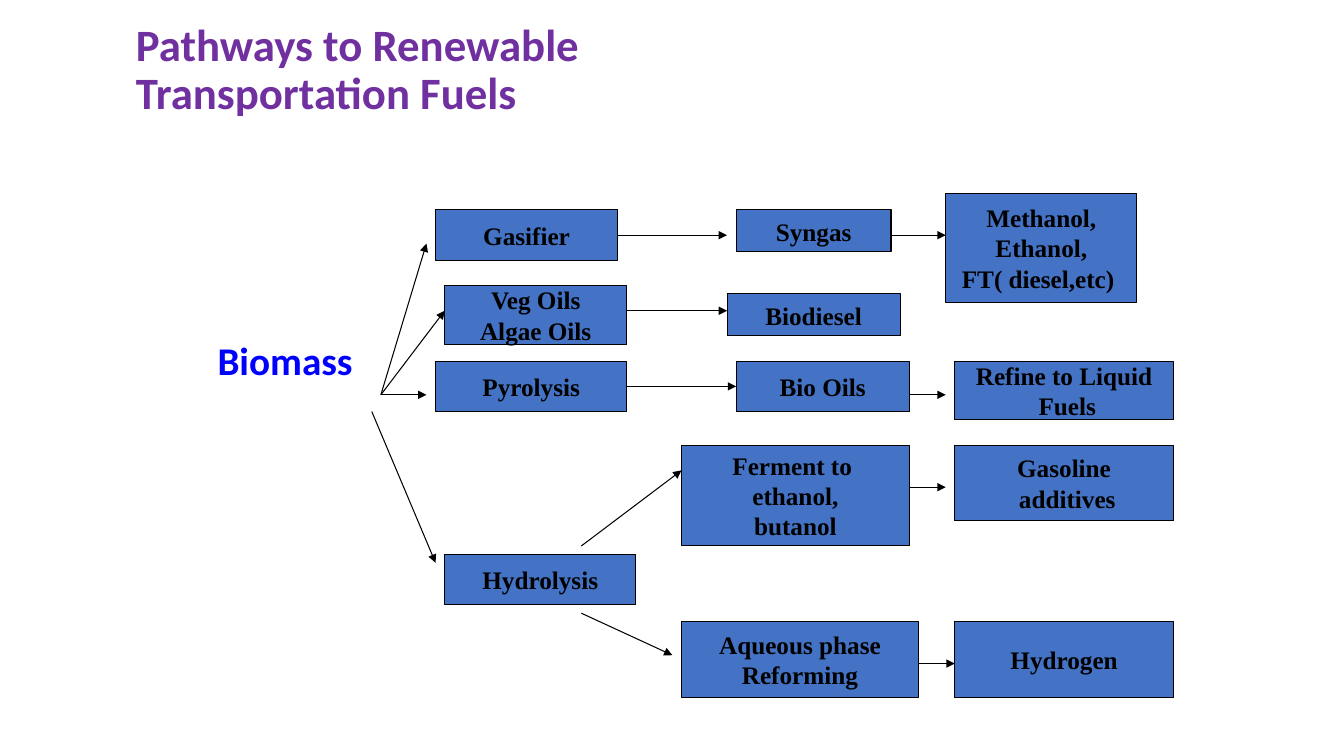
from lxml import etree
from pptx import Presentation
from pptx.dml.color import RGBColor
from pptx.enum.shapes import MSO_CONNECTOR, MSO_SHAPE
from pptx.enum.text import MSO_ANCHOR, PP_ALIGN
from pptx.oxml.ns import qn
from pptx.util import Inches, Pt

PURPLE = RGBColor(0x70, 0x30, 0xA0)
BLUE = RGBColor(0x00, 0x00, 0xFF)
BOX_BLUE = RGBColor(0x44, 0x72, 0xC4)
BLACK = RGBColor(0, 0, 0)

# Headings: text, (left, top, width, height) in inches, size, colour
HEADINGS = [
    ("Pathways to Renewable\vTransportation Fuels", (1.25, 0.08, 10.58, 1.25), 32, PURPLE),
    ("Biomass", (2.06, 3.31, 1.7, 0.57), 28, BLUE),
]

# Boxes: lines, (column, row, columns wide, rows high)
BOXES = [
    # Processes
    (["Gasifier"], (0, 25, 20, 6)),
    (["Veg Oils", "Algae Oils"], (1, 34, 20, 7)),
    (["Pyrolysis"], (0, 43, 21, 6)),
    (["Hydrolysis"], (1, 66, 21, 6)),
    # Intermediates
    (["Syngas"], (33, 25, 17, 5)),
    (["Biodiesel"], (32, 35, 19, 5)),
    (["Bio Oils"], (33, 43, 19, 6)),
    (["Ferment to ", "ethanol,", "butanol"], (27, 53, 25, 12)),
    (["Aqueous phase", "Reforming"], (27, 74, 26, 9)),
    # Products
    (["Methanol,", "Ethanol,", "FT( diesel,etc) "], (56, 23, 21, 13)),
    (["Refine to Liquid", " Fuels"], (57, 43, 24, 7)),
    (["Gasoline", " additives"], (57, 53, 24, 9)),
    (["Hydrogen"], (57, 74, 24, 9)),
]

# Arrows: (column, row) of tail and of head
ARROWS = [
    # From biomass
    ((-6, 47), (-1, 29)),
    ((-6, 47), (1, 37)),
    ((-6, 47), (-1, 47)),
    ((-7, 49), (0, 67)),
    # From processes
    ((20, 28), (32, 28)),
    ((21, 37), (32, 37)),
    ((21, 46), (33, 46)),
    ((16, 65), (27, 56)),
    ((16, 73), (26, 78)),
    # To products
    ((50, 28), (56, 28)),
    ((52, 47), (56, 47)),
    ((52, 58), (56, 58)),
    ((53, 79), (57, 79)),
]

# Grid: columns start at the process boxes, rows are twelfths of an inch
GRID_LEFT = 4.32
COLUMN = 5.15 / 57
ROW = 1 / 12


def grid_point(col, row):
    return Inches(GRID_LEFT + col * COLUMN), Inches(row * ROW)


def style(p, font, size, color):
    p.font.name = font
    p.font.size = Pt(size)
    p.font.bold = True
    p.font.color.rgb = color


def add_heading(slide, text, frame, size, color):
    tf = slide.shapes.add_textbox(*map(Inches, frame)).text_frame
    tf.word_wrap = True
    tf.vertical_anchor = MSO_ANCHOR.MIDDLE
    p = tf.paragraphs[0]
    p.text = text
    p.line_spacing = 0.9
    style(p, "Calibri", size, color)


def add_box(slide, lines, cell):
    col, row, cols, rows = cell
    sp = slide.shapes.add_shape(MSO_SHAPE.RECTANGLE, *grid_point(col, row),
                                Inches(cols * COLUMN), Inches(rows * ROW))
    sp.shadow.inherit = False
    sp.fill.solid()
    sp.fill.fore_color.rgb = BOX_BLUE
    sp.line.color.rgb = BLACK
    sp.line.width = Pt(0.75)
    tf = sp.text_frame
    tf.word_wrap = False
    tf.vertical_anchor = MSO_ANCHOR.MIDDLE
    tf.text = "\n".join(lines)
    for p in tf.paragraphs:
        p.alignment = PP_ALIGN.CENTER
        style(p, "Times New Roman", 18, BLACK)
    return sp


def add_arrow(slide, tail, head, sides):
    cx = slide.shapes.add_connector(MSO_CONNECTOR.STRAIGHT,
                                    *grid_point(*tail), *grid_point(*head))
    cx.line.color.rgb = BLACK
    cx.line.width = Pt(0.75)
    etree.SubElement(cx.line._get_or_add_ln(), qn("a:tailEnd"), type="triangle")
    etree.SubElement(cx._element.spPr, qn("a:effectLst"))
    if tail in sides:
        cx.begin_connect(*sides[tail])
    if head in sides:
        cx.end_connect(*sides[head])


def main():
    prs = Presentation()
    prs.slide_width, prs.slide_height = Inches(13.33), Inches(7.5)
    slide = prs.slides.add_slide(prs.slide_layouts[6])

    for heading in HEADINGS:
        add_heading(slide, *heading)

    # Boxes, with the middles of their left and right sides
    sides = {}
    for lines, cell in BOXES:
        sp = add_box(slide, lines, cell)
        col, row, cols, rows = cell
        middle = row + rows / 2
        sides[col, middle] = (sp, 1)
        sides[col + cols, middle] = (sp, 3)

    for tail, head in ARROWS:
        add_arrow(slide, tail, head, sides)

    prs.save("out.pptx")


if __name__ == "__main__":
    main()
